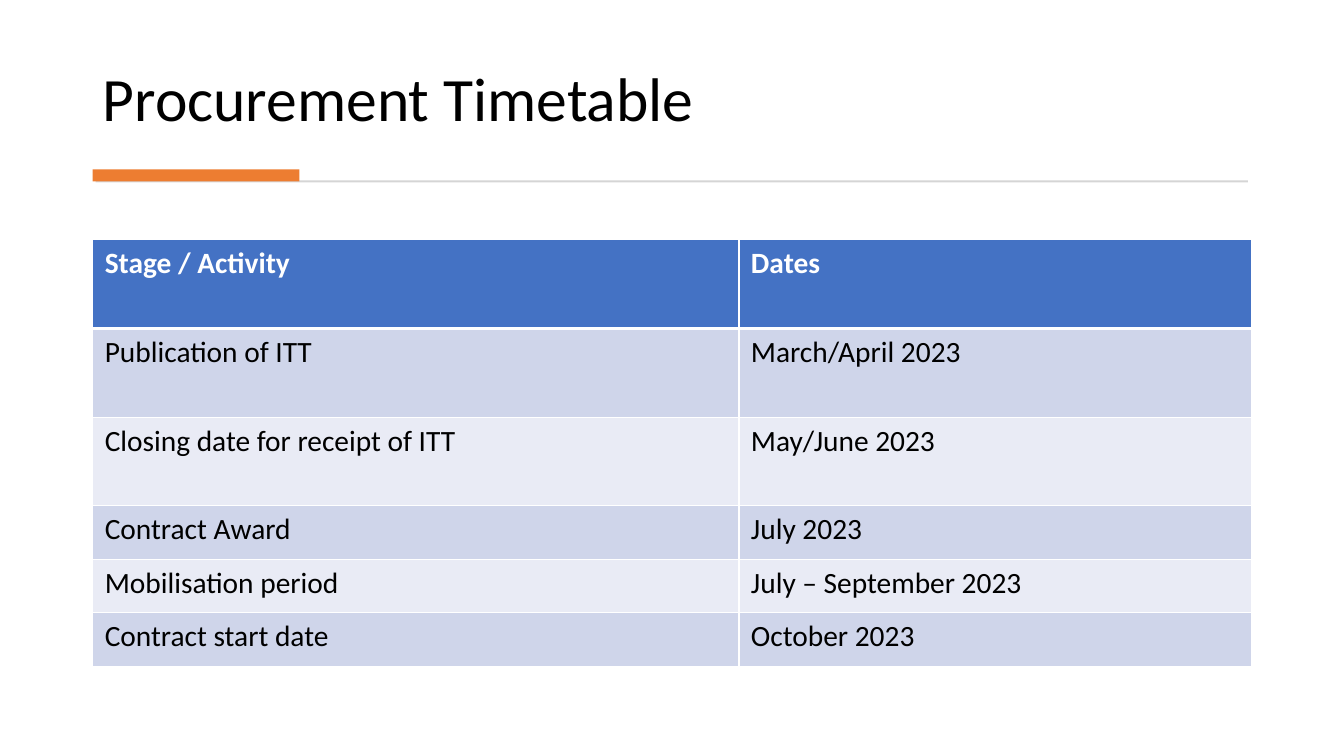
from lxml import etree
from pptx import Presentation
from pptx import util as u
from pptx.dml.color import RGBColor
from pptx.enum import shapes, text
from pptx.oxml.ns import qn

BLACK = RGBColor(0x00, 0x00, 0x00)
WHITE = RGBColor(0xFF, 0xFF, 0xFF)
GREY = RGBColor(0xD5, 0xD5, 0xD5)
ORANGE = RGBColor(0xED, 0x7D, 0x31)
BLUE = RGBColor(0x44, 0x72, 0xC4)
BANDS = (RGBColor(0xCF, 0xD5, 0xEA), RGBColor(0xE9, 0xEB, 0xF5))

LEFT = 6.9
COLUMNS = (48.08, 38.18)
TALL, SHORT = 11.73, 7.07
TIMETABLE = [
    (TALL, "Stage / Activity", "Dates"),
    (TALL, "Publication of ITT", "March/April 2023"),
    (TALL, "Closing date for receipt of ITT", "May/June 2023"),
    (SHORT, "Contract Award", "July 2023"),
    (SHORT, "Mobilisation period", "July – September 2023"),
    (SHORT, "Contract start date", "October 2023"),
]


class Deck:
    font = "Calibri"
    title_size = 44
    table_size = 21
    rule, header_rule = 1, 3

    def __init__(self):
        self.prs = Presentation()
        self.prs.slide_width = u.Inches(13.33)
        self.prs.slide_height = u.Inches(7.5)
        self.slide = self.prs.slides.add_slide(self.prs.slide_layouts[5])

    def x(self, percent):
        return round(self.prs.slide_width * percent / 100)

    def y(self, percent):
        return round(self.prs.slide_height * percent / 100)

    def box(self, left, top, width, height):
        return self.x(left), self.y(top), self.x(width), self.y(height)

    def style(self, p, size, color, bold=False):
        p.alignment = text.PP_ALIGN.LEFT
        p.font.name = self.font
        p.font.size = u.Pt(size)
        p.font.color.rgb = color
        p.font.bold = bold

    def title(self, words, *area):
        sp = self.slide.shapes.title
        sp.left, sp.top, sp.width, sp.height = self.box(*area)
        tf = sp.text_frame
        tf.text = words
        tf.vertical_anchor = text.MSO_ANCHOR.BOTTOM
        p = tf.paragraphs[0]
        p.line_spacing = 0.9
        self.style(p, self.title_size, BLACK)

    def bar(self, color, *area):
        sp = self.slide.shapes.add_shape(shapes.MSO_SHAPE.RECTANGLE, *self.box(*area))
        sp.shadow.inherit = False
        sp.fill.solid()
        sp.fill.fore_color.rgb = color
        sp.line.fill.background()

    def borders(self, cell, top, bottom):
        props = cell._tc.get_or_add_tcPr()
        sides = {"L": self.rule, "R": self.rule, "T": top, "B": bottom}
        for i, (side, width) in enumerate(sides.items()):
            ln = etree.Element(qn(f"a:ln{side}"), w=str(u.Pt(width)))
            fill = etree.SubElement(ln, qn("a:solidFill"))
            etree.SubElement(fill, qn("a:srgbClr"), val=str(WHITE))
            props.insert(i, ln)

    def cell(self, cell, words, row):
        header = row == 0
        cell.text = words
        cell.margin_left = cell.margin_right = u.Inches(0.12)
        cell.margin_top = cell.margin_bottom = u.Inches(0.06)
        cell.fill.solid()
        cell.fill.fore_color.rgb = BLUE if header else BANDS[(row - 1) % 2]
        self.style(cell.text_frame.paragraphs[0], self.table_size,
                   WHITE if header else BLACK, header)
        self.borders(cell, self.header_rule if row == 1 else self.rule,
                     self.header_rule if header else self.rule)

    def table(self, rows, columns, left, top):
        height = sum(row[0] for row in rows)
        area = self.box(left, top, sum(columns), height)
        table = self.slide.shapes.add_table(len(rows), len(columns), *area).table
        for column, width in zip(table.columns, columns):
            column.width = self.x(width)
        for i, (height, *words) in enumerate(rows):
            table.rows[i].height = self.y(height)
            for j, entry in enumerate(words):
                self.cell(table.cell(i, j), entry, i)


def main():
    deck = Deck()
    deck.title("Procurement Timetable", LEFT, 3.73, 86.18, 14.8)
    deck.bar(GREY, 7.12, 23.87, 85.73, 0.27)
    deck.bar(ORANGE, LEFT, 22.4, 15.38, 1.6)
    deck.table(TIMETABLE, COLUMNS, LEFT, 31.73)
    deck.prs.save("out.pptx")


if __name__ == "__main__":
    main()
